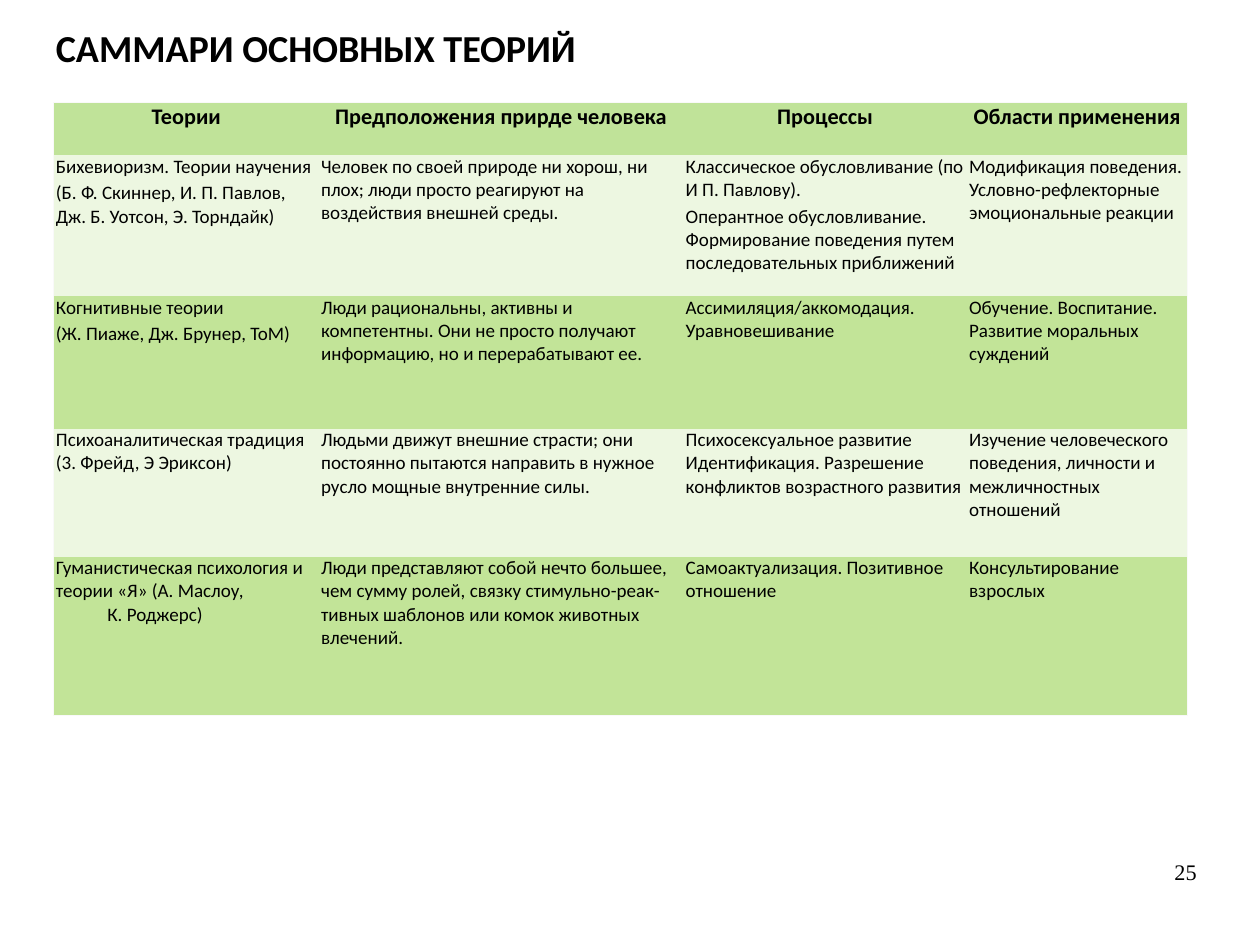
from pptx import Presentation
from pptx.dml.color import RGBColor
from pptx.enum.text import PP_ALIGN
from pptx.oxml.ns import qn
from pptx.util import Inches, Pt
from lxml import etree

LEFT, CENTER, RIGHT = PP_ALIGN.LEFT, PP_ALIGN.CENTER, PP_ALIGN.RIGHT
COLORS = {"text": "000000", "header": "C0E399", "light": "EDF7E1",
          "green": "C2E498", "border": "F9F9F9"}
NO_STYLE = "{2D5ABB26-0587-4C30-8999-92F81FD0307C}"
CM_PER_INCH = 2.54
COL_WIDTHS = [2.32, 3.19, 2.48, 1.93]
ROW_HEIGHTS = [0.46, 1.23, 1.16, 1.12, 1.39]
AUTHOR_INDENT = 0.45

HEADERS = ["Теории", "Предположения прирде человека", "Процессы", "Области применения"]
THEORIES = [
    [["Бихевиоризм. Теории научения",
      "(Б. Ф. Скиннер, И. П. Павлов, Дж. Б. Уотсон, Э. Торндайк)"],
     ["Человек по своей природе ни хорош, ни плох; люди просто реагируют на "
      "воздействия внешней среды."],
     ["Классическое обусловливание (по И П. Павлову).",
      "Оперантное обусловливание. Формирование поведения путем "
      "последовательных приближений"],
     ["Модификация поведения. Условно-рефлекторные эмоциональные реакции"]],
    [["Когнитивные теории", "(Ж. Пиаже, Дж. Брунер, ToM)"],
     ["Люди рациональны, активны и компетентны. Они не просто получают "
      "информацию, но и перерабатывают ее."],
     ["Ассимиляция/аккомодация. Уравновешивание"],
     ["Обучение. Воспитание. Развитие моральных суждений"]],
    [["Психоаналитическая традиция (3. Фрейд, Э Эриксон)"],
     ["Людьми движут внешние страсти; они постоянно пытаются направить в нужное "
      "русло мощные внутренние силы."],
     ["Психосексуальное развитие Идентификация. Разрешение конфликтов "
      "возрастного развития"],
     ["Изучение человеческого поведения, личности и межличностных отношений"]],
    [["Гуманистическая психология и теории «Я» (А. Маслоу,", "К. Роджерс)"],
     ["Люди представляют собой нечто большее, чем сумму ролей, связку "
      "стимульно-реак-тивных шаблонов или комок животных влечений."],
     ["Самоактуализация. Позитивное отношение"],
     ["Консультирование взрослых"]],
]


def rgb(name):
    return RGBColor.from_string(COLORS[name])


def add_text(p, text, size, bold=False, align=LEFT, font="Calibri", spacing=0.93):
    p.alignment = align
    p.line_spacing = spacing
    r = p.add_run()
    r.text = text
    r.font.size = Pt(size)
    r.font.name = font
    r.font.bold = bold
    r.font.color.rgb = rgb("text")


def add_border(cell, side):
    tcPr = cell._tc.get_or_add_tcPr()
    ln = etree.SubElement(tcPr, qn(f"a:ln{side}"), w=str(Pt(0.75)))
    fill = etree.SubElement(ln, qn("a:solidFill"))
    etree.SubElement(fill, qn("a:srgbClr"), val=COLORS["border"])


def fill_cell(cell, paragraphs, header):
    cell.margin_left = cell.margin_right = Inches(0.02)
    cell.margin_top = cell.margin_bottom = 0
    tf = cell.text_frame
    for i, text in enumerate(paragraphs):
        p = tf.paragraphs[0] if i == 0 else tf.add_paragraph()
        if header:
            add_text(p, text, 14, True, CENTER, spacing=1.0)
        else:
            add_text(p, text, 12, spacing=1.0)
        if text.startswith("К. "):
            p._p.get_or_add_pPr().set("marL", str(Inches(AUTHOR_INDENT)))
        elif i:
            p.space_before = Pt(2)


def add_theories(s, x, y, w, h):
    rows = [[[title] for title in HEADERS]] + THEORIES
    last_row, last_col = len(rows) - 1, len(HEADERS) - 1
    table = s.shapes.add_table(len(rows), len(HEADERS), Inches(x), Inches(y),
                               Inches(w), Inches(h)).table
    table.first_row = table.horz_banding = False
    table._tbl.tblPr.find(qn("a:tableStyleId")).text = NO_STYLE
    for col, width in zip(table.columns, COL_WIDTHS):
        col.width = Inches(width)
    for i, (row, height) in enumerate(zip(rows, ROW_HEIGHTS)):
        table.rows[i].height = Inches(height)
        color = "header" if i == 0 else "light" if i % 2 else "green"
        for j, paragraphs in enumerate(row):
            cell = table.cell(i, j)
            fill_cell(cell, paragraphs, i == 0)
            edges = {"L": j == 0, "R": j == last_col, "T": i == 0, "B": i == last_row}
            for side, outer in edges.items():
                if outer:
                    add_border(cell, side)
            cell.fill.solid()
            cell.fill.fore_color.rgb = rgb(color)


def add_title(s, x, y, w, h):
    tf = s.shapes.add_textbox(Inches(x), Inches(y), Inches(w), Inches(h)).text_frame
    tf.word_wrap = False
    add_text(tf.paragraphs[0], "САММАРИ ОСНОВНЫХ ТЕОРИЙ", 24, True)


def add_page_number(s, x, y, w, h):
    tf = s.shapes.add_textbox(Inches(x), Inches(y), Inches(w), Inches(h)).text_frame
    tf.word_wrap = True
    tf.margin_left = tf.margin_right = tf.margin_top = tf.margin_bottom = 0
    add_text(tf.paragraphs[0], "25", 14, align=RIGHT, font="Times New Roman", spacing=0.95)


def main():
    prs = Presentation()
    prs.slide_width = Inches(28 / CM_PER_INCH)
    prs.slide_height = Inches(21 / CM_PER_INCH)
    s = prs.slides.add_slide(prs.slide_layouts[6])
    add_theories(s, 0.47, 0.9, sum(COL_WIDTHS), sum(ROW_HEIGHTS))
    add_title(s, 0.39, 0.2, 4.8, 0.48)
    add_page_number(s, 7.9, 7.53, 2.57, 0.57)
    prs.save("out.pptx")


if __name__ == "__main__":
    main()
